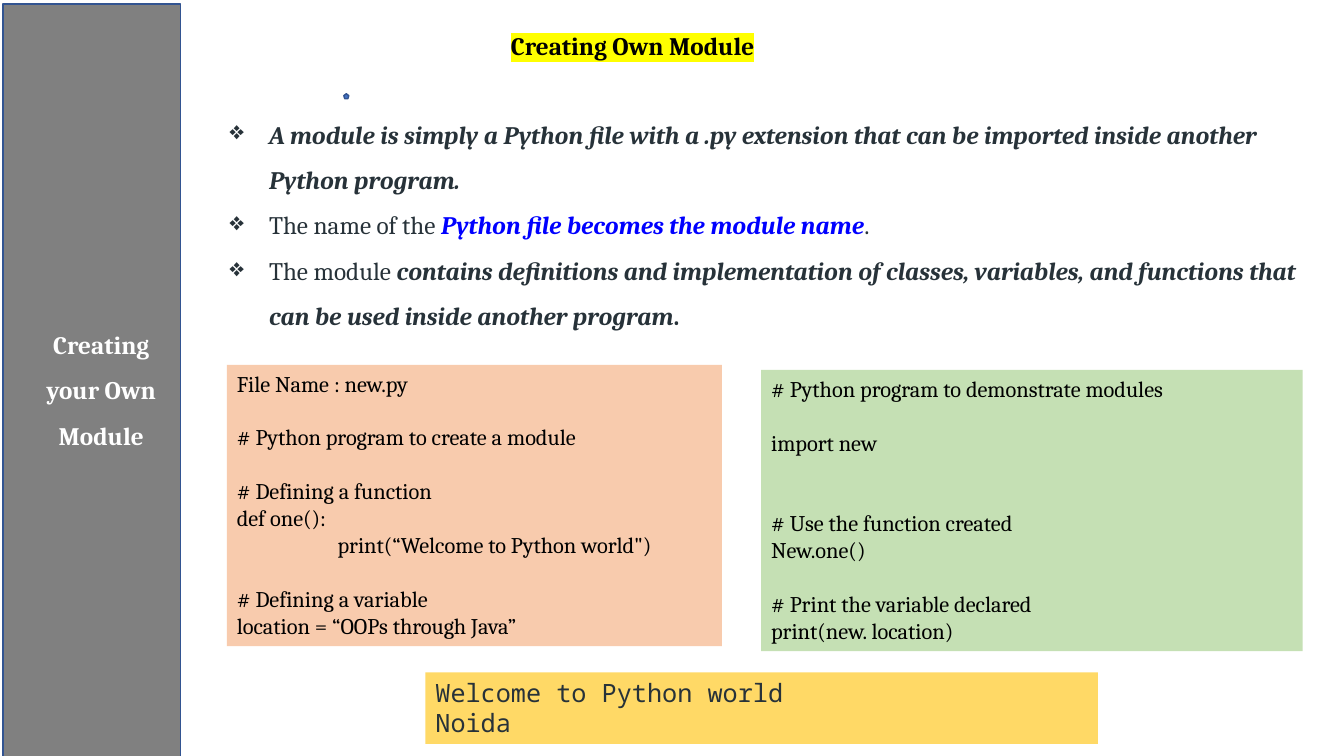
from dataclasses import dataclass, field

from lxml import etree
from pptx import Presentation
from pptx.dml.color import RGBColor
from pptx.enum.shapes import MSO_SHAPE
from pptx.enum.text import MSO_ANCHOR, MSO_AUTO_SIZE, PP_ALIGN
from pptx.oxml.ns import qn
from pptx.slide import Slide
from pptx.util import Pt

PX = 9144  # 100 px to the inch
RECTANGLE, PENTAGON = MSO_SHAPE.RECTANGLE, MSO_SHAPE.REGULAR_PENTAGON
LEFT, CENTER = PP_ALIGN.LEFT, PP_ALIGN.CENTER
TOP, MIDDLE = MSO_ANCHOR.TOP, MSO_ANCHOR.MIDDLE
GROW, FIXED = MSO_AUTO_SIZE.SHAPE_TO_FIT_TEXT, MSO_AUTO_SIZE.NONE


@dataclass(frozen=True)
class Theme:
    serif: str = "Cambria"
    mono: str = "Noto Sans Mono"
    body_size: float = 18
    code_size: float = 16
    code_line: float = 19.2
    black: str = "000000"
    white: str = "FFFFFF"
    ink: str = "273239"
    keyword: str = "0000FF"
    highlight: str = "FFFF00"
    outline: str = "325491"
    sidebar: str = "808080"
    marker: str = "4472C4"
    module_code: str = "F8CBAD"
    program_code: str = "C5E0B4"
    output: str = "FFD966"


THEME = Theme()


@dataclass(frozen=True)
class Span:
    text: str
    color: str = THEME.black
    size: float = THEME.body_size
    font: str = THEME.serif
    bold: bool = False
    italic: bool = False
    highlight: str = ""


@dataclass(frozen=True)
class Para:
    spans: list[Span]
    align: PP_ALIGN = LEFT
    indent: int = 0
    hanging: int = 0
    bullet: str = ""
    format: dict[str, object] = field(default_factory=dict)


@dataclass(frozen=True)
class Block:
    box: tuple[int, int, int, int]
    paras: list[Para] = field(default_factory=list)
    shape: MSO_SHAPE | None = None
    fill: str = ""
    outline: str = ""
    anchor: MSO_ANCHOR = TOP
    auto_size: MSO_AUTO_SIZE = GROW


def add_span(paragraph, span: Span) -> None:
    run = paragraph.add_run()
    run.text = span.text
    values = {"size": Pt(span.size), "name": span.font,
              "bold": span.bold, "italic": span.italic}
    for name, value in values.items():
        setattr(run.font, name, value)
    run.font.color.rgb = RGBColor.from_string(span.color)
    if span.highlight:
        mark = etree.Element(qn("a:highlight"))
        etree.SubElement(mark, qn("a:srgbClr"), val=span.highlight)
        run.font.fill  # the highlight follows the text fill
        run.font._element.find(qn("a:solidFill")).addnext(mark)


def write_para(paragraph, para: Para) -> None:
    for name, value in {"alignment": para.align, **para.format}.items():
        setattr(paragraph, name, value)
    properties = paragraph._p.get_or_add_pPr()
    properties.set("marL", str(para.indent * PX))
    properties.set("indent", str(-para.hanging * PX))
    if para.bullet:
        etree.SubElement(properties, qn("a:buChar"), char=para.bullet)
    for span in para.spans:
        add_span(paragraph, span)


def draw_block(slide: Slide, block: Block) -> None:
    box = [length * PX for length in block.box]
    if block.shape is None:
        item = slide.shapes.add_textbox(*box)
    else:
        item = slide.shapes.add_shape(block.shape, *box)
        item.shadow.inherit = False
        item.fill.solid()
        item.fill.fore_color.rgb = RGBColor.from_string(block.fill)
        if block.outline:
            item.line.color.rgb = RGBColor.from_string(block.outline)
            item.line.width = Pt(1)
        else:
            item.line.fill.background()
    frame = item.text_frame
    settings = {"word_wrap": True, "auto_size": block.auto_size,
                "vertical_anchor": block.anchor}
    for name, value in settings.items():
        setattr(frame, name, value)
    for number, para in enumerate(block.paras):
        write_para(frame.add_paragraph() if number else frame.paragraphs[0], para)


def code_line(text: str, gap: int = 0, indent: int = 0) -> Para:
    """Code set below a gap counted in lines."""
    return Para([Span(text, size=THEME.code_size)], indent=indent,
                format={"space_before": Pt(gap * THEME.code_line)})


def bullet(*spans: Span) -> Para:
    return Para(list(spans), indent=59, hanging=39, bullet="❖",
                format={"line_spacing": 1.5})


def plain(text: str) -> Span:
    return Span(text, THEME.ink)


def strong(text: str, color: str = THEME.ink) -> Span:
    return Span(text, color, bold=True, italic=True)


def output_line(text: str) -> Para:
    return Para([Span(text, THEME.ink, font=THEME.mono)])


BLOCKS = [
    Block((3, 4, 176, 750),
          [Para([Span("Creating your Own Module", THEME.white, bold=True)],
                CENTER, indent=19,
                format={"line_spacing": 1.5, "space_before": Pt(6)})],
          RECTANGLE, THEME.sidebar, THEME.outline, MIDDLE, FIXED),
    Block((341, 93, 5, 5), shape=PENTAGON, fill=THEME.marker,
          outline=THEME.outline, auto_size=FIXED),
    Block((198, 98, 1114, 232), [
        bullet(strong("A module is simply a Python file with a .py extension "
                      "that can be imported inside another Python program.")),
        bullet(plain("The name of the "),
               strong("Python file becomes the module name", THEME.keyword),
               plain(".")),
        bullet(plain("The module "),
               strong("contains definitions and implementation of classes, "
                      "variables, and functions that can be used inside "
                      "another program"),
               Span(".", THEME.ink, bold=True)),
    ]),
    Block((475, 25, 305, 40),
          [Para([Span("Creating Own Module", bold=True,
                      highlight=THEME.highlight)], CENTER)]),
    Block((225, 362, 491, 279), [
        code_line("File Name : new.py"),
        code_line("# Python program to create a module", gap=1),
        code_line("# Defining a function", gap=1),
        code_line("def one():"),
        code_line("print(“Welcome to Python world\")", indent=100),
        code_line("# Defining a variable", gap=1),
        code_line("location = “OOPs through Java”"),
    ], RECTANGLE, THEME.module_code),
    Block((755, 367, 537, 279), [
        code_line("# Python program to demonstrate modules"),
        code_line("import new", gap=1),
        code_line("# Use the function created", gap=2),
        code_line("New.one()"),
        code_line("# Print the variable declared", gap=1),
        code_line("print(new. location)"),
    ], RECTANGLE, THEME.program_code),
    Block((422, 667, 667, 71),
          [output_line("Welcome to Python world"), output_line("Noida")],
          RECTANGLE, THEME.output),
]


def main() -> None:
    deck = Presentation()
    deck.slide_width, deck.slide_height = 1333 * PX, 750 * PX
    slide = deck.slides.add_slide(deck.slide_layouts[6])
    for block in BLOCKS:
        draw_block(slide, block)
    deck.save("out.pptx")


if __name__ == "__main__":
    main()
